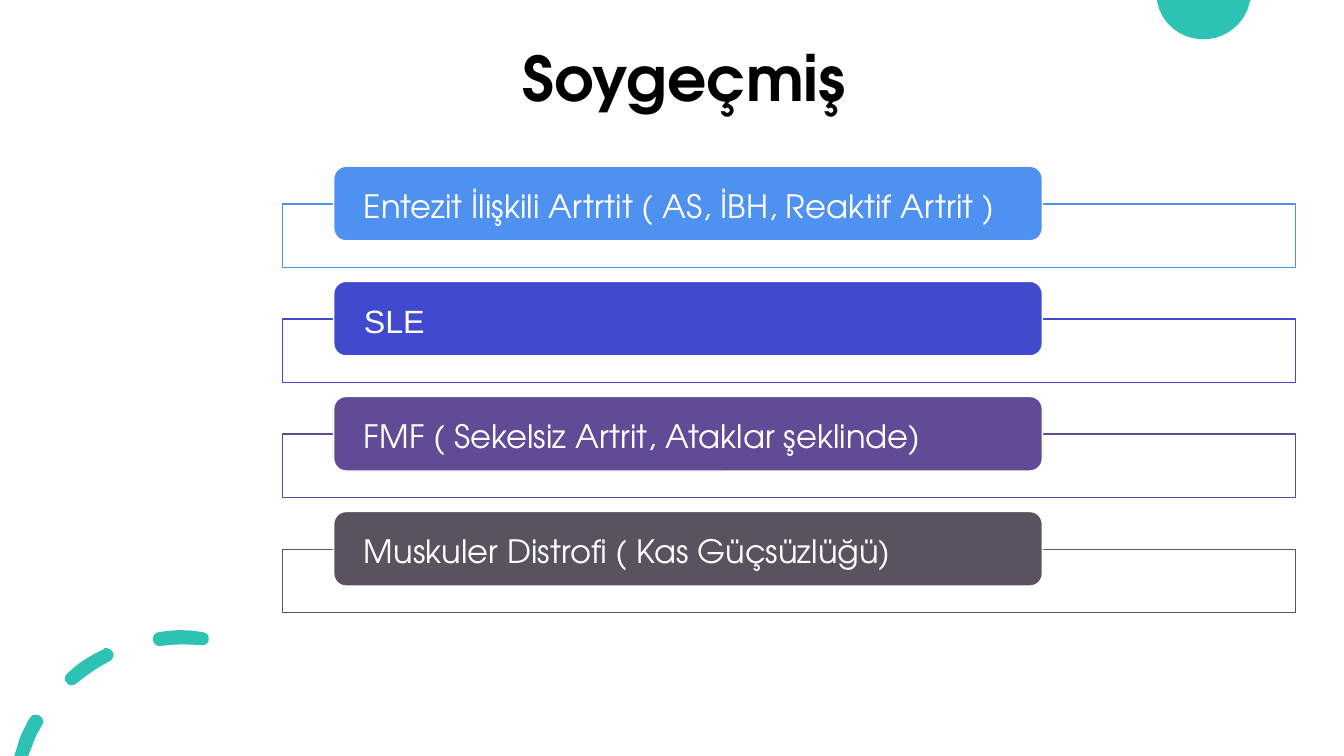
"""Build a slide that lists family history items as four labelled bars."""
from dataclasses import dataclass

from lxml import etree
from pptx import Presentation
from pptx.dml.color import RGBColor
from pptx.enum.shapes import MSO_SHAPE
from pptx.enum.text import MSO_ANCHOR, PP_ALIGN
from pptx.oxml.ns import qn
from pptx.util import Cm, Pt

RECT = MSO_SHAPE.RECTANGLE
ROUND = MSO_SHAPE.ROUNDED_RECTANGLE
MIDDLE, TOP = MSO_ANCHOR.MIDDLE, MSO_ANCHOR.TOP
LEFT, CENTER = PP_ALIGN.LEFT, PP_ALIGN.CENTER


@dataclass(frozen=True)
class Theme:
    """Colours, fonts and type sizes of the slide."""
    teal: str = "2CC3B4"
    white: str = "FFFFFF"
    black: str = "000000"
    main: str = "TeX Gyre Adventor"
    plain: str = "Arial"
    title: int = 44
    label: int = 23
    line: int = 1


THEME = Theme()

ROWS = [
    ("Entezit İlişkili Artrtit ( AS, İBH, Reaktif Artrit )", "4E91F0", THEME.main),
    ("SLE", "414ACE", THEME.plain),
    ("FMF ( Sekelsiz Artrit, Ataklar şeklinde)", "614B96", THEME.main),
    ("Muskuler Distrofi ( Kas Güçsüzlüğü)", "5B5260", THEME.main),
]
PITCH = 2.9

DISC = [[
    (29.16, 0), (31.52, 0), (31.5, 0.03),
    (31.39, 0.58, 30.91, 0.99, 30.33, 0.99),
    (29.74, 0.99, 29.26, 0.58, 29.16, 0.03),
]]
DASHES = [
    [
        (0.91, 18.01), (0.86, 17.98, 0.79, 18.03, 0.76, 18.08),
        (0.66, 18.24, 0.58, 18.42, 0.51, 18.57),
        (0.36, 19.05), (0.71, 19.05), (0.84, 18.72),
        (0.89, 18.57, 0.97, 18.42, 1.07, 18.26),
        (1.12, 18.19, 1.07, 18.06, 0.99, 18.03),
        (0.97, 18.01, 0.94, 18.01, 0.91, 18.01),
    ],
    [
        (2.67, 16.33), (2.64, 16.33, 2.62, 16.33, 2.62, 16.36),
        (2.29, 16.51, 1.96, 16.71, 1.7, 16.97),
        (1.63, 17.02, 1.6, 17.15, 1.68, 17.2),
        (1.7, 17.25, 1.75, 17.27, 1.8, 17.27), (1.8, 17.27),
        (1.85, 17.27, 1.88, 17.25, 1.93, 17.22),
        (2.18, 17.02, 2.46, 16.81, 2.77, 16.66),
        (2.84, 16.61, 2.9, 16.51, 2.84, 16.43),
        (2.82, 16.36, 2.74, 16.33, 2.67, 16.33),
    ],
    [
        (4.55, 15.88), (4.37, 15.88, 4.19, 15.9, 4.01, 15.93),
        (3.91, 15.93, 3.84, 16.03, 3.86, 16.13),
        (3.86, 16.21, 3.94, 16.28, 4.01, 16.28),
        (4.04, 16.28, 4.04, 16.28, 4.04, 16.28),
        (4.39, 16.23, 4.72, 16.23, 5.05, 16.26),
        (5.16, 16.28, 5.26, 16.21, 5.26, 16.13),
        (5.28, 16.03, 5.21, 15.93, 5.11, 15.93),
        (5.11, 15.93, 5.11, 15.93, 5.11, 15.93),
        (4.93, 15.9, 4.72, 15.88, 4.55, 15.88),
    ],
]


def color(code):
    """Turn a hex code into a colour."""
    return RGBColor.from_string(code)


def paint(shape, fill, line=None):
    """Set fill and outline, and drop the shadow."""
    shape.shadow.inherit = False
    shape.fill.solid()
    shape.fill.fore_color.rgb = color(fill)
    if line:
        shape.line.color.rgb = color(line)
        shape.line.width = Pt(THEME.line)
    else:
        shape.line.fill.background()


def fade(shape, percent):
    """Give a solid fill the stated opacity."""
    tint = next(shape.element.spPr.iter(qn("a:srgbClr")))
    etree.SubElement(tint, qn("a:alpha")).set("val", str(percent * 1000))


def bend(shape, paths):
    """Turn the segments that have control points into curves."""
    nodes = list(shape.element.iter(qn("a:moveTo"), qn("a:lnTo")))
    steps = [step for path in paths for step in path]
    for node, step in zip(nodes, steps):
        if len(step) == 2:
            continue
        arc = etree.Element(qn("a:cubicBezTo"))
        for x, y in zip(step[::2], step[1::2]):
            point = etree.SubElement(arc, qn("a:pt"))
            point.set("x", str(Cm(x) - shape.left))
            point.set("y", str(Cm(y) - shape.top))
        node.getparent().replace(node, arc)


def add_art(slide, paths, fill):
    """Add one freeform made of closed outlines."""
    first, *rest = [[(Cm(s[-2]), Cm(s[-1])) for s in path] for path in paths]
    pen = slide.shapes.build_freeform(*first[0])
    pen.add_line_segments(first[1:], close=True)
    for points in rest:
        pen.move_to(*points[0])
        pen.add_line_segments(points[1:], close=True)
    shape = pen.convert_to_shape()
    bend(shape, paths)
    paint(shape, fill)


def add_box(group, kind, place, fill, line):
    """Add a preset shape at left, top, width and height."""
    shape = group.shapes.add_shape(kind, *map(Cm, place))
    paint(shape, fill, line)
    return shape


def add_text(parent, place, text, font, size, tone, align, anchor, space, bold=False):
    """Add a text box with one styled run."""
    box = parent.shapes.add_textbox(*map(Cm, place))
    frame = box.text_frame
    frame.word_wrap = True
    frame.vertical_anchor = anchor
    para = frame.paragraphs[0]
    para.alignment = align
    para.line_spacing = space
    run = para.add_run()
    run.text = text
    run.font.name = font
    run.font.size = Pt(size)
    run.font.bold = bold
    run.font.color.rgb = color(tone)
    return frame


def add_row(group, index, text, tone, font):
    """Add an outlined bar with its rounded label."""
    shift = index * PITCH
    bar = add_box(group, RECT, (7.12, 5.14 + shift, 25.53, 1.6), THEME.white, tone)
    fade(bar, 90)
    add_box(group, ROUND, (8.41, 4.19 + shift, 17.86, 1.88), tone, THEME.white)
    frame = add_text(group, (8.48, 4.28 + shift, 17.68, 1.7), text, font,
                     THEME.label, THEME.white, LEFT, MIDDLE, 1.1)
    frame.margin_left = frame.margin_right = Cm(0.69)
    frame.margin_top = frame.margin_bottom = Cm(0)


def main():
    """Build and save the slide."""
    deck = Presentation()
    deck.slide_width, deck.slide_height = Cm(33.87), Cm(19.05)
    slide = deck.slides.add_slide(deck.slide_layouts[6])
    for paths in (DISC, DASHES):
        add_art(slide, paths, THEME.teal)
    add_text(slide, (12.27, 1.09, 9.96, 2.41), "Soygeçmiş", THEME.main,
             THEME.title, THEME.black, CENTER, TOP, 0.9, True)
    group = slide.shapes.add_group_shape()
    for index, row in enumerate(ROWS):
        add_row(group, index, *row)
    deck.save("out.pptx")


if __name__ == "__main__":
    main()
